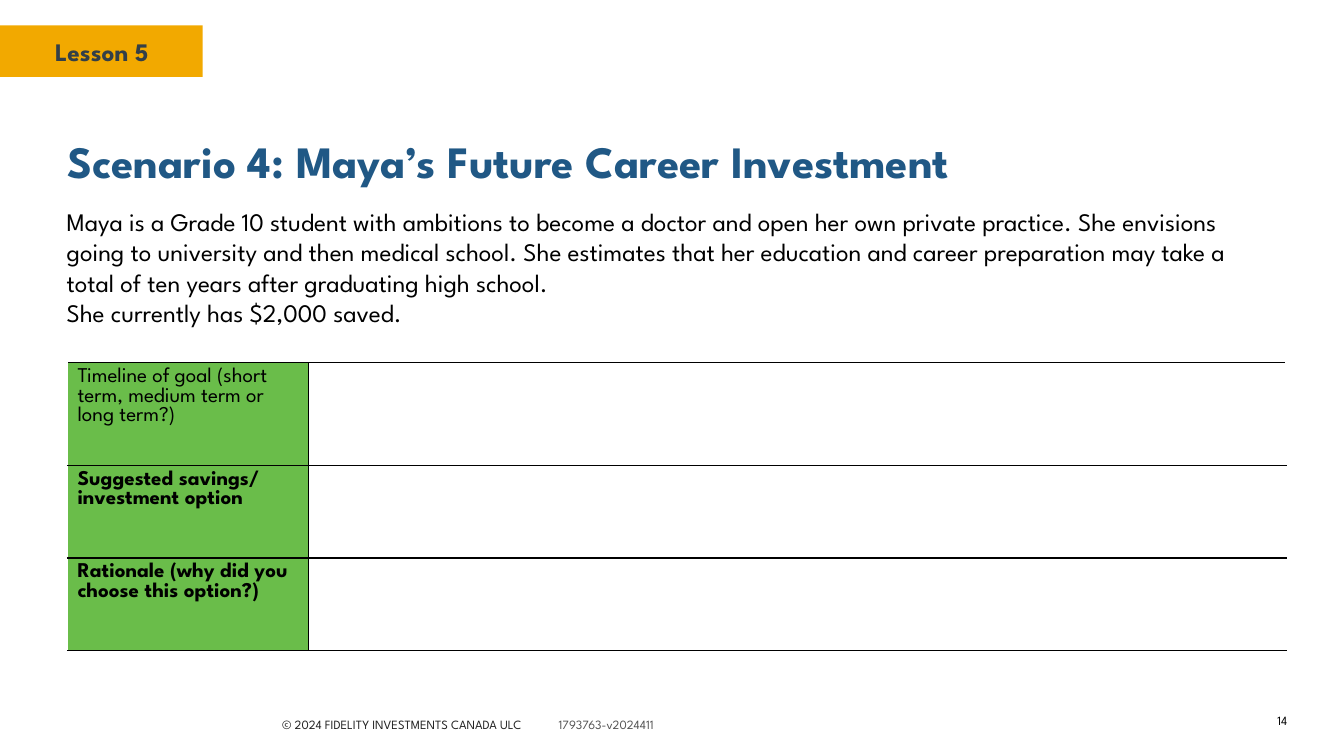
"""Builds the Lesson 5 worksheet slide on Maya's career investment."""
from lxml.etree import SubElement
from pptx import Presentation
from pptx.dml.color import RGBColor
from pptx.enum.shapes import MSO_SHAPE as Shape
from pptx.enum.text import MSO_ANCHOR as Anchor, PP_ALIGN as Align
from pptx.oxml.ns import qn
from pptx.util import Cm, Pt

FONT = "League Spartan"
AMBER = RGBColor(0xF2, 0xA9, 0x00)
SLATE = RGBColor(0x33, 0x3F, 0x48)
BLUE = RGBColor(0x20, 0x58, 0x85)
GREEN = RGBColor(0x6A, 0xBD, 0x4A)
CHARCOAL = RGBColor(0x22, 0x22, 0x22)
GRAY = RGBColor(0x54, 0x54, 0x54)
BLACK = RGBColor(0x00, 0x00, 0x00)
WHITE = RGBColor(0xFF, 0xFF, 0xFF)


def add_run(paragraph, text, size, color, bold=False):
    run = paragraph.add_run()
    run.text = text
    run.font.name = FONT
    run.font.size = Pt(size)
    run.font.bold = bold
    run.font.color.rgb = color


def add_text(left, top, width, height):
    frame = slide.shapes.add_textbox(Cm(left), Cm(top), Cm(width), Cm(height)).text_frame
    frame.word_wrap = True
    return frame


prs = Presentation()
prs.slide_width, prs.slide_height = Cm(33.87), Cm(19.05)
slide = prs.slides.add_slide(prs.slide_layouts[5])

lesson_band = slide.shapes.add_shape(Shape.RECTANGLE, Cm(0), Cm(0.64), Cm(5.11), Cm(1.3))
lesson_band.shadow.inherit = False
lesson_band.fill.solid()
lesson_band.fill.fore_color.rgb = AMBER
lesson_band.line.fill.background()
lesson = add_text(1.14, 0.79, 3.33, 1.02)
add_run(lesson.paragraphs[0], "Lesson 5", 18, SLATE, True)

title = slide.shapes.title
title.left, title.top, title.width, title.height = Cm(1.45), Cm(3.23), Cm(30.99), Cm(1.85)
title.text_frame.vertical_anchor = Anchor.TOP
heading = title.text_frame.paragraphs[0]
heading.alignment = Align.LEFT
add_run(heading, "Scenario 4: Maya’s Future Career Investment", 32, BLUE, True)

story = add_text(1.43, 5.08, 30.99, 3.33).paragraphs[0]
add_run(story, "Maya is a Grade 10 student with ambitions to become a doctor and open her own "
        "private practice. She envisions going to university and then medical school. "
        "She estimates that her education and career preparation may take a total of "
        "ten years after graduating high school.", 18, BLACK)
story.add_line_break()
add_run(story, "She currently has $2,000 saved.", 18, BLACK)

QUESTIONS = [
    (["Timeline of goal (short term, medium term or long term?)"], 2.59, False),
    (["Suggested savings/", "investment option"], 2.33, True),
    (["Rationale (why did you choose this option?)"], 2.33, True),
]
worksheet = slide.shapes.add_table(
    len(QUESTIONS), 2, Cm(1.7), Cm(9.14), Cm(30.71), Cm(7.25)).table
worksheet.first_row = worksheet.horz_banding = False
worksheet.columns[0].width, worksheet.columns[1].width = Cm(6.07), Cm(24.64)

for row, (lines, height, bold) in enumerate(QUESTIONS):
    worksheet.rows[row].height = Cm(height)
    question, answer = worksheet.cell(row, 0), worksheet.cell(row, 1)
    for number, line in enumerate(lines):
        frame = question.text_frame
        paragraph = frame.add_paragraph() if number else frame.paragraphs[0]
        add_run(paragraph, line, 15, BLACK, bold)
    for cell, fill, left, right in ((question, GREEN, WHITE, BLACK),
                                    (answer, WHITE, BLACK, WHITE)):
        properties = cell._tc.get_or_add_tcPr()
        for side, color in (("L", left), ("R", right), ("T", BLACK), ("B", BLACK)):
            border = SubElement(properties, qn("a:ln" + side), w=str(Pt(1)))
            SubElement(SubElement(border, qn("a:solidFill")), qn("a:srgbClr"), val=str(color))
        cell.fill.solid()
        cell.fill.fore_color.rgb = fill

footer = add_text(6.86, 17.93, 10.92, 0.64).paragraphs[0]
tabs = SubElement(footer._p.get_or_add_pPr(), qn("a:tabLst"))
SubElement(tabs, qn("a:tab"), pos=str(Cm(6.97)), algn="l")
add_run(footer, "© 2024 FIDELITY INVESTMENTS CANADA ULC\t", 9, CHARCOAL)
add_run(footer, "1793763-v2024411", 9, GRAY)

page_number = add_text(30.91, 17.93, 1.78, 0.46)
page_number.vertical_anchor = Anchor.MIDDLE
page_number.paragraphs[0].alignment = Align.RIGHT
add_run(page_number.paragraphs[0], "14", 9, BLACK)

prs.save("out.pptx")
